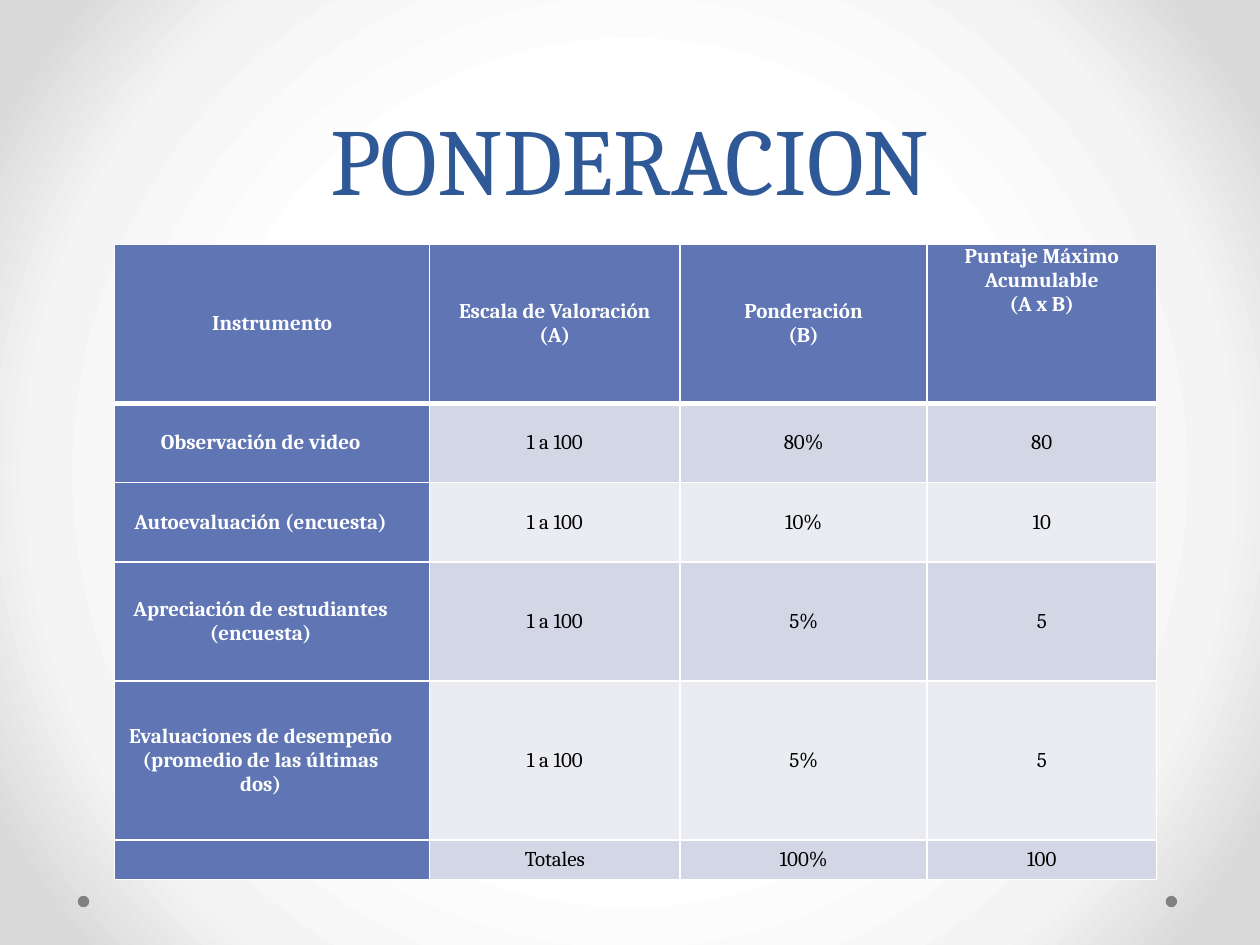
from lxml import etree
from pptx import Presentation
from pptx.dml.color import RGBColor
from pptx.enum import shapes, text
from pptx.oxml import ns, parse_xml
from pptx.util import Cm, Pt

COLORS = {
    "title": "2F5897", "head": "6076B4", "odd": "D2D6E5", "even": "EAECF2",
    "white": "FFFFFF", "black": "000000", "dot": "808080",
}
BACKGROUND_STOPS = [(50, "FFFFFF"), (76, "F4F4F4"), (92, "DADADA")]
FONT = "Cambria"

COLUMN_WIDTHS = [6.35, 5.05, 4.98, 4.62]
ROW_HEIGHTS = [3.2, 1.6, 1.6, 2.4, 3.2, 0.8]
ROWS = [
    ["Instrumento", "Escala de Valoración\n(A)", "Ponderación\n(B)",
     "Puntaje Máximo Acumulable\n(A x B)"],
    ["Observación de video", "1 a 100", "80%", "80"],
    ["Autoevaluación (encuesta)", "1 a 100", "10%", "10"],
    ["Apreciación de estudiantes (encuesta)", "1 a 100", "5%", "5"],
    ["Evaluaciones de desempeño (promedio de las últimas dos)",
     "1 a 100", "5%", "5"],
    ["", "Totales", "100%", "100"],
]


def rgb(name):
    return RGBColor.from_string(COLORS[name])


def set_background(s):
    """Radial gradient that darkens towards the corners."""
    s.background.fill.solid()
    bg_pr = s.background._cSld.bg.bgPr
    stops = "".join(
        f'<a:gs pos="{pos * 1000}"><a:srgbClr val="{color}"/></a:gs>'
        for pos, color in BACKGROUND_STOPS)
    gradient = parse_xml(
        f'<a:gradFill {ns.nsdecls("a")} rotWithShape="1"><a:gsLst>{stops}</a:gsLst>'
        '<a:path path="circle"><a:fillToRect l="50000" t="50000" r="50000" b="50000"/>'
        '</a:path></a:gradFill>')
    bg_pr.replace(bg_pr[0], gradient)


def add_dot(s, left):
    sp = s.shapes.add_shape(shapes.MSO_SHAPE.OVAL,
                            Cm(left), Cm(18.06), Cm(0.23), Cm(0.23))
    sp.shadow.inherit = False
    sp.fill.solid()
    sp.fill.fore_color.rgb = rgb("dot")
    sp.line.fill.background()


def write(tf, content, size, color, bold=False):
    tf.text = content
    for p in tf.paragraphs:
        p.alignment = text.PP_ALIGN.CENTER
        for r in p.runs:
            r.font.name = FONT
            r.font.size = Pt(size)
            r.font.bold = bold
            r.font.color.rgb = rgb(color)


def add_title(s, content):
    tf = s.shapes.add_textbox(Cm(1.27), 0, Cm(22.86), Cm(4.45)).text_frame
    tf.word_wrap = True
    tf.vertical_anchor = text.MSO_ANCHOR.BOTTOM
    write(tf, content, 54, "title")
    tf.paragraphs[0].line_spacing = Pt(58)


def set_borders(cell, top, bottom):
    tc_pr = cell._tc.get_or_add_tcPr()
    for i, (side, width) in enumerate(zip("LRTB", (1, 1, top, bottom))):
        ln = etree.Element(ns.qn(f"a:ln{side}"), w=str(Pt(width)))
        fill = etree.SubElement(ln, ns.qn("a:solidFill"))
        etree.SubElement(fill, ns.qn("a:srgbClr"), val=COLORS["white"])
        tc_pr.insert(i, ln)


def format_cell(cell, content, row, col):
    is_head = row == 0 or col == 0
    cell.margin_left = cell.margin_right = Cm(0.18)
    cell.margin_top = cell.margin_bottom = 0
    if col == 0 and row > 0:
        cell.margin_right = Cm(0.64)
    # The last heading sits at the top of its cell
    at_top = row == 0 and col == len(COLUMN_WIDTHS) - 1
    cell.vertical_anchor = text.MSO_ANCHOR.TOP if at_top else text.MSO_ANCHOR.MIDDLE
    cell.fill.solid()
    cell.fill.fore_color.rgb = rgb("head" if is_head else "odd" if row % 2 else "even")
    write(cell.text_frame, content, 12, "white" if is_head else "black", is_head)
    set_borders(cell, top=3 if row == 1 else 1, bottom=3 if row == 0 else 1)


def add_score_table(s):
    table = s.shapes.add_table(
        len(ROWS), len(COLUMN_WIDTHS), Cm(2.31), Cm(4.93),
        Cm(sum(COLUMN_WIDTHS)), Cm(sum(ROW_HEIGHTS))).table
    for column, width in zip(table.columns, COLUMN_WIDTHS):
        column.width = Cm(width)
    for row, height in zip(table.rows, ROW_HEIGHTS):
        row.height = Cm(height)
    for i, values in enumerate(ROWS):
        for j, value in enumerate(values):
            format_cell(table.cell(i, j), value, i, j)


def main():
    prs = Presentation()
    prs.slide_width, prs.slide_height = Cm(25.4), Cm(19.05)
    s = prs.slides.add_slide(prs.slide_layouts[6])

    # Backdrop
    set_background(s)
    for left in (23.5, 1.57):
        add_dot(s, left)

    # Content
    add_title(s, "PONDERACION")
    add_score_table(s)
    prs.save("out.pptx")


if __name__ == "__main__":
    main()
